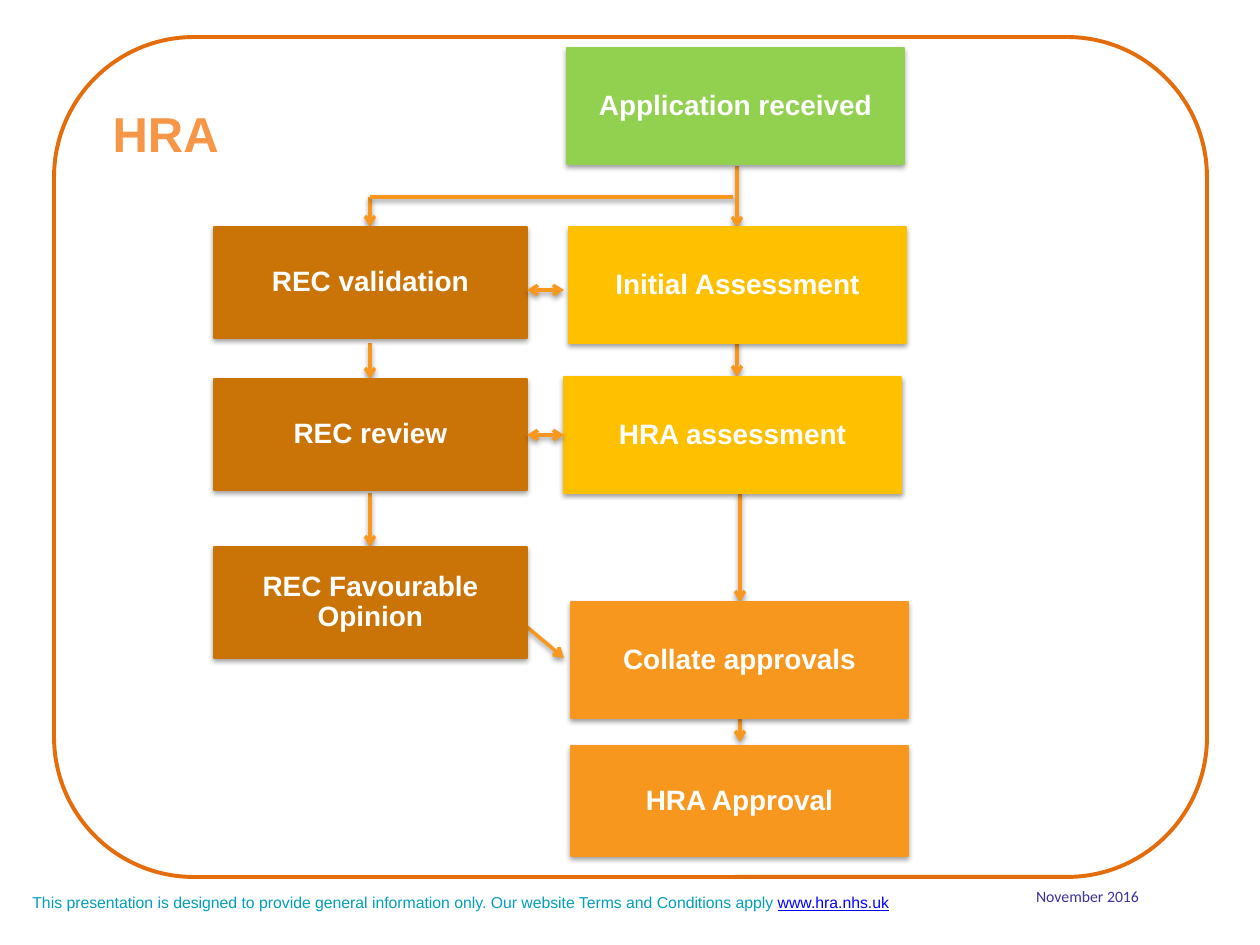
from dataclasses import dataclass
from typing import NamedTuple

from lxml.etree import SubElement
from pptx import Presentation
from pptx.dml.color import RGBColor
from pptx.enum.shapes import MSO_CONNECTOR as Connector, MSO_SHAPE as Shape
from pptx.enum.text import MSO_ANCHOR as Anchor, PP_ALIGN as Align
from pptx.oxml.ns import qn
from pptx.util import Emu, Inches, Pt

PX_PER_INCH = 126


@dataclass(frozen=True)
class Theme:
    received: str = "92D050"
    committee: str = "CA7306"
    assessment: str = "FFC000"
    approval: str = "F8971D"
    arrow: str = "F8971D"
    frame: str = "E46C0A"
    title: str = "F79646"
    note: str = "009FBA"
    link: str = "0000FF"
    date: str = "3C32A0"
    box_text: str = "FFFFFF"
    title_size: int = 28
    box_size: int = 16
    small_size: int = 9
    font: str = "Arial"
    date_font: str = "Calibri"


THEME = Theme()


class Area(NamedTuple):
    left: int
    top: int
    width: int
    height: int


class Step(NamedTuple):
    text: str
    area: Area
    color: str


class Arrow(NamedTuple):
    start: tuple[int, int]
    end: tuple[int, int]
    head: bool = False
    tail: bool = True


REC_LEFT, REC_WIDTH, REC_HEIGHT = 214, 313, 111
REC_RIGHT = REC_LEFT + REC_WIDTH
REC_CENTER = 370
HRA_WIDTH, HRA_HEIGHT = 337, 116
HRA_EDGE = 564
HRA_CENTER, APPROVAL_CENTER = 737, 740

STEPS = [
    Step("REC validation", Area(REC_LEFT, 227, REC_WIDTH, REC_HEIGHT), THEME.committee),
    Step("REC review", Area(REC_LEFT, 379, REC_WIDTH, REC_HEIGHT), THEME.committee),
    Step("REC Favourable Opinion", Area(REC_LEFT, 547, REC_WIDTH, REC_HEIGHT), THEME.committee),
    Step("Application received", Area(567, 48, HRA_WIDTH, HRA_HEIGHT), THEME.received),
    Step("Initial Assessment", Area(569, 227, HRA_WIDTH, HRA_HEIGHT), THEME.assessment),
    Step("HRA assessment", Area(HRA_EDGE, 377, HRA_WIDTH, HRA_HEIGHT), THEME.assessment),
    Step("Collate approvals", Area(571, 602, HRA_WIDTH, HRA_HEIGHT), THEME.approval),
    Step("HRA Approval", Area(571, 746, HRA_WIDTH, 110), THEME.approval),
]

FLOW_ARROWS = [
    Arrow((REC_CENTER, 197), (REC_CENTER, 227)),
    Arrow((733, 197), (REC_CENTER, 197), tail=False),
    Arrow((REC_CENTER, 343), (REC_CENTER, 379)),
    Arrow((REC_CENTER, 493), (REC_CENTER, 547)),
    Arrow((HRA_CENTER, 166), (HRA_CENTER, 228)),
    Arrow((HRA_CENTER, 343), (HRA_CENTER, 377)),
    Arrow((APPROVAL_CENTER, 493), (APPROVAL_CENTER, 602)),
    Arrow((APPROVAL_CENTER, 718), (APPROVAL_CENTER, 742)),
    Arrow((REC_RIGHT, 627), (HRA_EDGE, 658)),
]
EXCHANGE_ARROWS = [Arrow((REC_RIGHT, y), (HRA_EDGE, y), head=True) for y in (290, 435)]


def px(value: int) -> Emu:
    return Emu(round(value * Inches(1) / PX_PER_INCH))


def apply_format(target, values: dict) -> None:
    for name, value in values.items():
        setattr(target, name, value)


def add_run(paragraph, text: str, color: str, size: int, font: str = THEME.font, **extra) -> None:
    run = paragraph.add_run()
    run.text = text
    apply_format(run.font, {"name": font, "size": Pt(size), **extra})
    run.font.color.rgb = RGBColor.from_string(color)


def add_shadow(shape) -> None:
    """Give a shape or connector a soft shadow straight below it."""
    properties = shape._element.spPr
    effects = properties.find(qn("a:effectLst"))
    if effects is None:
        effects = SubElement(properties, qn("a:effectLst"))
    shadow = SubElement(effects, qn("a:outerShdw"), blurRad=str(Pt(3.1)),
                        dist=str(Pt(1.6)), dir="5400000", rotWithShape="0")
    color = SubElement(shadow, qn("a:srgbClr"), val="000000")
    SubElement(color, qn("a:alpha"), val="38000")


def add_arrow(slide, arrow: Arrow) -> None:
    points = [px(value) for value in (*arrow.start, *arrow.end)]
    connector = slide.shapes.add_connector(Connector.STRAIGHT, *points)
    connector.line.color.rgb = RGBColor.from_string(THEME.arrow)
    connector.line.width = Pt(2)
    outline = connector._element.spPr.find(qn("a:ln"))
    for tag, shown in (("a:headEnd", arrow.head), ("a:tailEnd", arrow.tail)):
        if shown:
            SubElement(outline, qn(tag), type="arrow")
    add_shadow(connector)


def add_outline(slide, kind: Shape, area: Area, color: str, width: float):
    shape = slide.shapes.add_shape(kind, *map(px, area))
    shape.shadow.inherit = False
    shape.line.color.rgb = RGBColor.from_string(color)
    shape.line.width = Pt(width)
    return shape


def add_step(slide, step: Step) -> None:
    shape = add_outline(slide, Shape.RECTANGLE, step.area, step.color, 0.75)
    shape.fill.solid()
    shape.fill.fore_color.rgb = RGBColor.from_string(step.color)
    add_shadow(shape)
    margins = {f"margin_{side}": Inches(0.01) for side in ("left", "top", "right", "bottom")}
    apply_format(shape.text_frame,
                 {"word_wrap": True, "vertical_anchor": Anchor.MIDDLE, **margins})
    paragraph = shape.text_frame.paragraphs[0]
    apply_format(paragraph, {"alignment": Align.CENTER, "line_spacing": 0.9})
    add_run(paragraph, step.text, THEME.box_text, THEME.box_size, bold=True)


def add_text_box(slide, area: Area, alignment: Align):
    frame = slide.shapes.add_textbox(*map(px, area)).text_frame
    frame.word_wrap = True
    paragraph = frame.paragraphs[0]
    paragraph.alignment = alignment
    return paragraph


def set_title(slide, text: str, area: Area) -> None:
    title = slide.shapes.title
    apply_format(title, dict(zip(("left", "top", "width", "height"), map(px, area))))
    apply_format(title.text_frame, {"word_wrap": False, "vertical_anchor": Anchor.TOP})
    paragraph = title.text_frame.paragraphs[0]
    paragraph.alignment = Align.LEFT
    add_run(paragraph, text, THEME.title, THEME.title_size, bold=True)


def main() -> None:
    presentation = Presentation()
    presentation.slide_width, presentation.slide_height = Inches(10), Inches(7.5)
    slide = presentation.slides.add_slide(presentation.slide_layouts[5])

    set_title(slide, "HRA", Area(100, 97, 135, 69))
    note = add_text_box(slide, Area(20, 887, 1091, 32), Align.LEFT)
    add_run(note, "This presentation is designed to provide general information only. "
            "Our website Terms and Conditions apply ", THEME.note, THEME.small_size)
    add_run(note, "www.hra.nhs.uk", THEME.link, THEME.small_size, underline=True)

    for arrow in FLOW_ARROWS:
        add_arrow(slide, arrow)
    for step in STEPS:
        add_step(slide, step)
    frame = add_outline(slide, Shape.ROUNDED_RECTANGLE, Area(54, 37, 1153, 840), THEME.frame, 2.25)
    frame.fill.background()
    for arrow in EXCHANGE_ARROWS:
        add_arrow(slide, arrow)

    date = add_text_box(slide, Area(961, 881, 253, 50), Align.CENTER)
    add_run(date, "November 2016", THEME.date, THEME.small_size, THEME.date_font)
    presentation.save("out.pptx")


if __name__ == "__main__":
    main()
